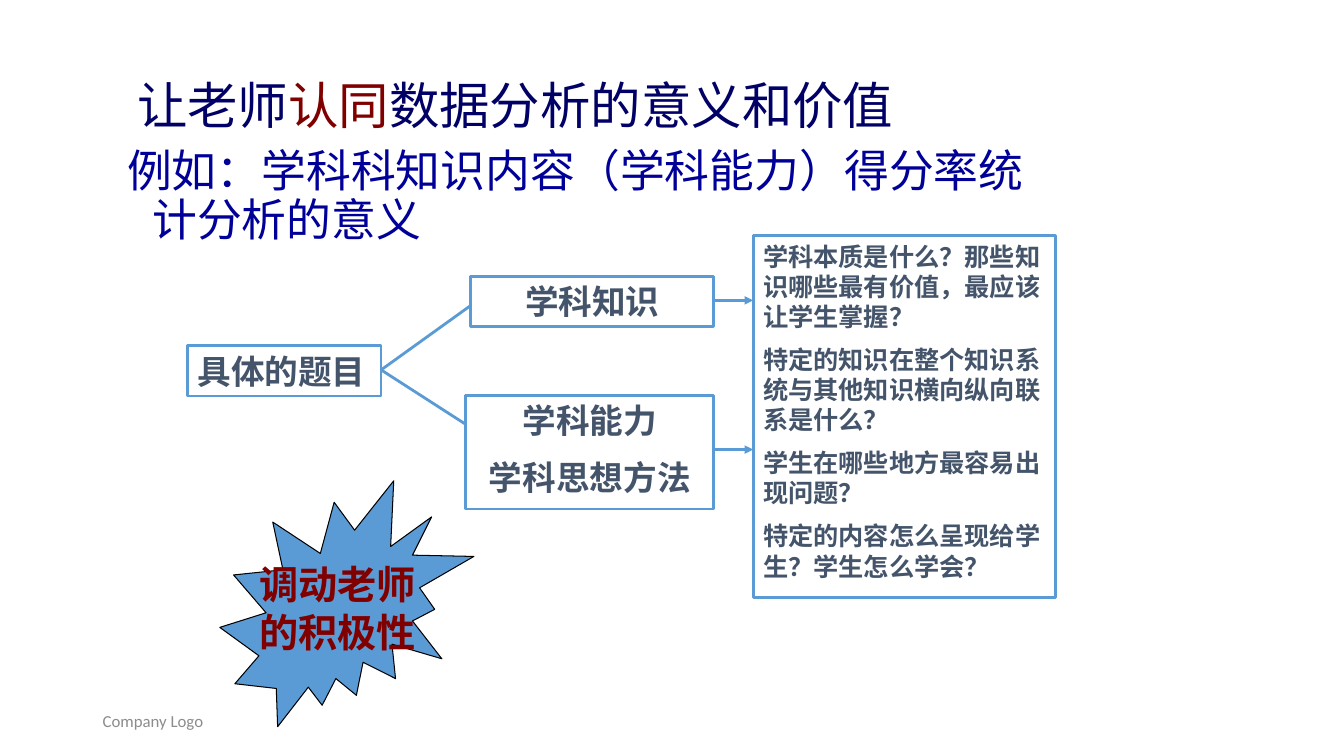
from pptx import Presentation
from pptx import util as u
from pptx.dml.color import RGBColor
from pptx.enum import shapes, text
from pptx.oxml.ns import qn
from lxml import etree

BLUE, SLATE, NAVY, ROYAL, MAROON = "5B9BD5", "44546A", "000066", "000099", "800000"
LEFT, CENTER = text.PP_ALIGN.LEFT, text.PP_ALIGN.CENTER
TOP, MIDDLE = text.MSO_ANCHOR.TOP, text.MSO_ANCHOR.MIDDLE


def colour(value):
    return RGBColor.from_string(value)


class Slide:
    """Holds the style and the page that is being built."""

    font = "Calibri"
    line_width = u.Pt(2)

    def __init__(self, page):
        self.page = page

    def place(self, shape, area):
        shape.left, shape.top, shape.width, shape.height = map(u.Inches, area)

    def set_font(self, font, size, hue, bold=False):
        font.name, font.size, font.bold = self.font, u.Pt(size), bold
        font.color.rgb = colour(hue)

    def add_lines(self, frame, lines, size, hue, bold=False, align=LEFT, gap=0):
        for number, line in enumerate(lines):
            para = frame.add_paragraph() if number else frame.paragraphs[0]
            para.text = line
            para.alignment = align
            para.space_before = u.Pt(gap)
            self.set_font(para.font, size, hue, bold)

    def heading(self, area, paragraphs):
        """Fill the body placeholder; each paragraph is a list of (text, size, colour)."""
        body = self.page.placeholders[1]
        self.place(body, area)
        frame = body.text_frame
        frame.auto_size = text.MSO_AUTO_SIZE.NONE
        for number, spans in enumerate(paragraphs):
            para = frame.add_paragraph() if number else frame.paragraphs[0]
            para.line_spacing, para.space_before = 0.9, u.Pt(10)
            properties = para._p.get_or_add_pPr()
            properties.set("marL", str(u.Inches(0.25)))
            properties.set("indent", str(u.Inches(-0.25)))
            etree.SubElement(properties, qn("a:buNone"))
            for words, size, hue in spans:
                span = para.add_run()
                span.text = words
                self.set_font(span.font, size, hue)

    def label(self, area, words, size, hue):
        box = self.page.shapes.add_textbox(*map(u.Inches, area))
        box.text_frame.word_wrap = True
        box.text_frame.vertical_anchor = MIDDLE
        self.add_lines(box.text_frame, [words], size, hue)

    def shape(self, kind, area, fill, line, width, anchor, wrap):
        shape = self.page.shapes.add_shape(kind, *map(u.Inches, area))
        shape.shadow.inherit = False
        if fill:
            shape.fill.solid()
            shape.fill.fore_color.rgb = colour(fill)
        else:
            shape.fill.background()
        shape.line.color.rgb = colour(line)
        shape.line.width = width
        shape.text_frame.vertical_anchor = anchor
        shape.text_frame.word_wrap = wrap
        return shape.text_frame

    def box(self, area, lines, size=24, align=CENTER):
        frame = self.shape(shapes.MSO_SHAPE.RECTANGLE, area, None, BLUE,
                           self.line_width, TOP, True)
        frame.auto_size = text.MSO_AUTO_SIZE.SHAPE_TO_FIT_TEXT
        self.add_lines(frame, lines, size, SLATE, True, align, size / 2)

    def burst(self, area, lines):
        frame = self.shape(shapes.MSO_SHAPE.EXPLOSION2, area, BLUE, "000000",
                           u.Pt(0.75), MIDDLE, False)
        self.add_lines(frame, lines, 28, MAROON, True, CENTER)

    def connect(self, start, end, arrow=False):
        connector = self.page.shapes.add_connector(
            shapes.MSO_CONNECTOR.STRAIGHT, *map(u.Inches, start + end))
        connector.line.color.rgb = colour(BLUE)
        connector.line.width = self.line_width
        properties = connector._element.spPr
        if arrow:
            etree.SubElement(properties.find(qn("a:ln")), qn("a:tailEnd"), type="triangle")
        etree.SubElement(properties, qn("a:effectLst"))


def main():
    deck = Presentation()
    deck.slide_width, deck.slide_height = u.Inches(13.33), u.Inches(7.5)
    page = deck.slides.add_slide(deck.slide_layouts[1])
    title = page.shapes.title._element
    title.getparent().remove(title)

    slide = Slide(page)
    slide.label((0.92, 6.95, 3, 0.4), "Company Logo", 12, "8C8C8C")
    slide.heading((1.16, 0.75, 9.31, 5.71), [
        [(" ", 32, ROYAL), ("让老师", 36, NAVY), ("认同", 36, MAROON),
         ("数据分析的意义和价值", 36, NAVY)],
        [("例如：学科科知识内容（学科能力）得分率统计分析的意义", 32, ROYAL)],
    ])

    slide.box((1.86, 3.43, 1.92, 0.5), ["具体的题目"], align=LEFT)
    for branch in ((4.67, 3.03), (4.62, 4.21)):
        slide.connect((3.78, 3.67), branch)
    slide.box((4.67, 2.74, 2.41, 0.5), ["学科知识"])
    slide.box((4.62, 3.92, 2.46, 1.13), ["学科能力", "学科思想方法"])
    for height in (2.98, 4.46):
        slide.connect((7.08, height), (7.47, height), arrow=True)
    slide.box((7.47, 2.34, 3, 3.59), [
        "学科本质是什么？那些知识哪些最有价值，最应该让学生掌握？",
        "特定的知识在整个知识系统与其他知识横向纵向联系是什么？",
        "学生在哪些地方最容易出现问题？",
        "特定的内容怎么呈现给学生？学生怎么学会？",
    ], size=18, align=LEFT)
    slide.burst((2.18, 4.77, 2.52, 2.44), ["调动老师", "的积极性"])
    deck.save("out.pptx")


if __name__ == "__main__":
    main()
